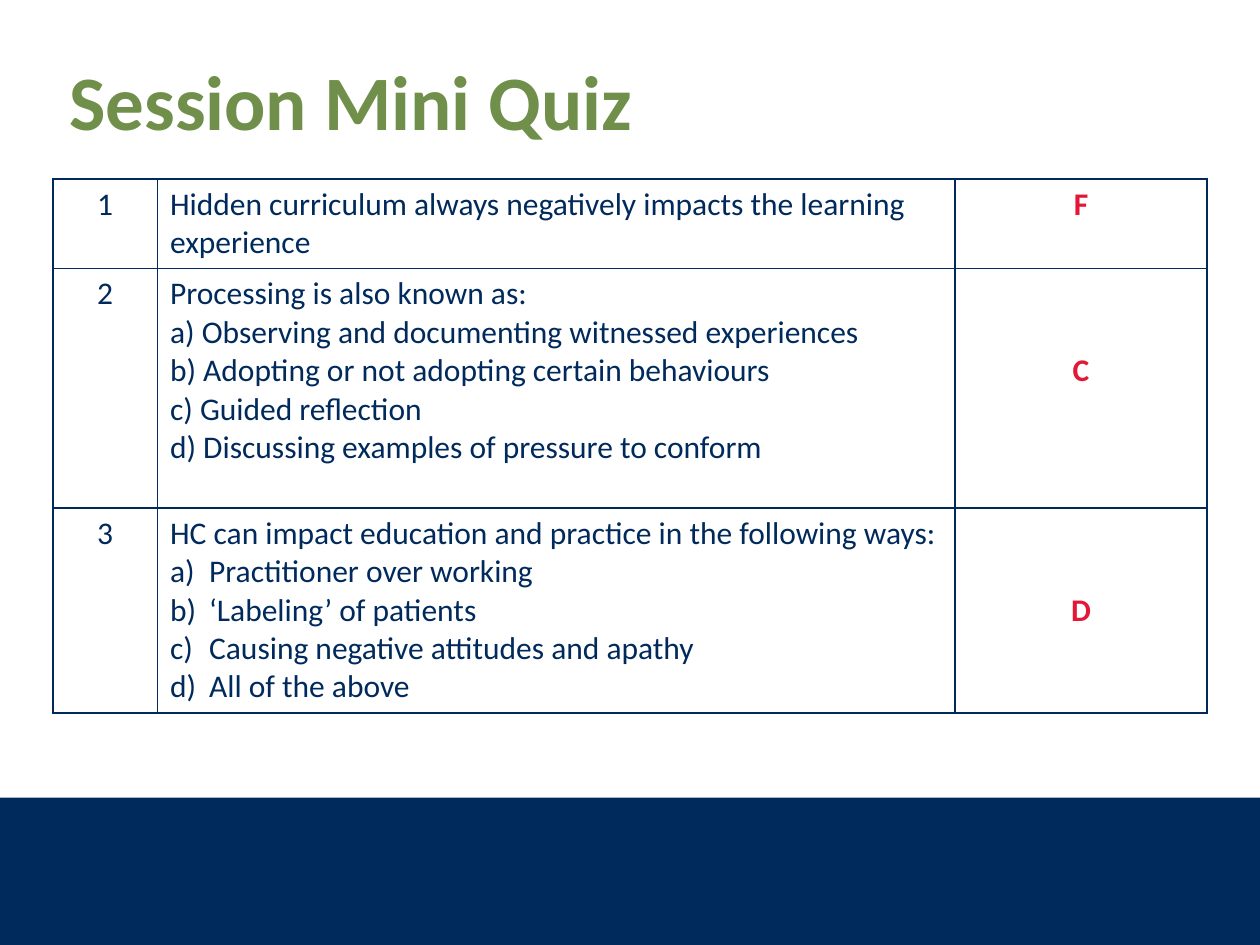
from lxml import etree
from pptx import Presentation
from pptx.dml.color import RGBColor
from pptx.enum.shapes import MSO_SHAPE
from pptx.enum.text import MSO_ANCHOR, PP_ALIGN
from pptx.oxml.ns import qn
from pptx.util import Inches, Pt

NAVY = RGBColor(0x00, 0x2A, 0x5C)
GREEN = RGBColor(0x6F, 0x8F, 0x4A)
RED = RGBColor(0xE3, 0x18, 0x37)
FONT = "Calibri"
LEFT, CENTER = PP_ALIGN.LEFT, PP_ALIGN.CENTER
MIDDLE = MSO_ANCHOR.MIDDLE
RECTANGLE = MSO_SHAPE.RECTANGLE

COLUMN_WIDTHS = [0.83, 6.33, 2]
COLUMN_STYLES = [(CENTER, NAVY, False), (LEFT, NAVY, False), (CENTER, RED, True)]
QUESTIONS = [
    (0.71, ["Hidden curriculum always negatively impacts the learning experience"], "F", 0.05),
    (1.9, ["Processing is also known as:",
           "a) Observing and documenting witnessed experiences",
           "b) Adopting or not adopting certain behaviours",
           "c) Guided reflection",
           "d) Discussing examples of pressure to conform"], "C", 0.66),
    (1.63, ["HC can impact education and practice in the following ways:",
            "a)\tPractitioner over working",
            "b)\t‘Labeling’ of patients",
            "c)\tCausing negative attitudes and apathy",
            "d)\tAll of the above"], "D", 0.66),
]


def format_paragraph(paragraph, alignment, size, color, bold):
    paragraph.alignment = alignment
    paragraph.font.name = FONT
    paragraph.font.size = Pt(size)
    paragraph.font.bold = bold
    paragraph.font.color.rgb = color


def add_borders(cell):
    properties = cell._tc.get_or_add_tcPr()
    for position, side in enumerate(["a:lnL", "a:lnR", "a:lnT", "a:lnB"]):
        line = etree.Element(qn(side), w=str(Pt(1)))
        fill = etree.SubElement(line, qn("a:solidFill"))
        etree.SubElement(fill, qn("a:srgbClr"), val=str(NAVY))
        properties.insert(position, line)


presentation = Presentation()
presentation.slide_width = Inches(10)
presentation.slide_height = Inches(7.5)
slide = presentation.slides.add_slide(presentation.slide_layouts[5])

title = slide.shapes.title
title.left, title.top = Inches(0.5), Inches(0.17)
title.width, title.height = Inches(9), Inches(1.25)
title_frame = title.text_frame
title_frame.text = "Session Mini Quiz"
title_frame.vertical_anchor = MIDDLE
title_frame.margin_left = title_frame.margin_right = Inches(0.05)
title_frame.margin_top = title_frame.margin_bottom = Inches(0.05)
format_paragraph(title_frame.paragraphs[0], LEFT, 44, GREEN, True)

footer_band = slide.shapes.add_shape(
    RECTANGLE, Inches(0), Inches(6.33), Inches(10), Inches(1.17))
footer_band.shadow.inherit = False
footer_band.fill.solid()
footer_band.fill.fore_color.rgb = NAVY
footer_band.line.fill.background()

table_height = sum(question[0] for question in QUESTIONS)
table = slide.shapes.add_table(
    len(QUESTIONS), len(COLUMN_WIDTHS), Inches(0.42), Inches(1.42),
    Inches(sum(COLUMN_WIDTHS)), Inches(table_height)).table
table.first_row = False
table.horz_banding = False
for column, width in zip(table.columns, COLUMN_WIDTHS):
    column.width = Inches(width)

for row_index, (height, question_lines, answer, answer_margin) in enumerate(QUESTIONS):
    row = table.rows[row_index]
    row.height = Inches(height)
    row_texts = [str(row_index + 1), "\n".join(question_lines), answer]
    for cell, text, style in zip(row.cells, row_texts, COLUMN_STYLES):
        alignment, color, bold = style
        cell.fill.background()
        add_borders(cell)
        cell.text_frame.text = text
        for paragraph in cell.text_frame.paragraphs:
            if "\t" in paragraph.text:
                tabs = etree.SubElement(paragraph._p.get_or_add_pPr(), qn("a:tabLst"))
                etree.SubElement(tabs, qn("a:tab"), pos=str(Inches(0.31)), algn="l")
            format_paragraph(paragraph, alignment, 18, color, bold)
    row.cells[2].margin_top = Inches(answer_margin)

presentation.save("out.pptx")
